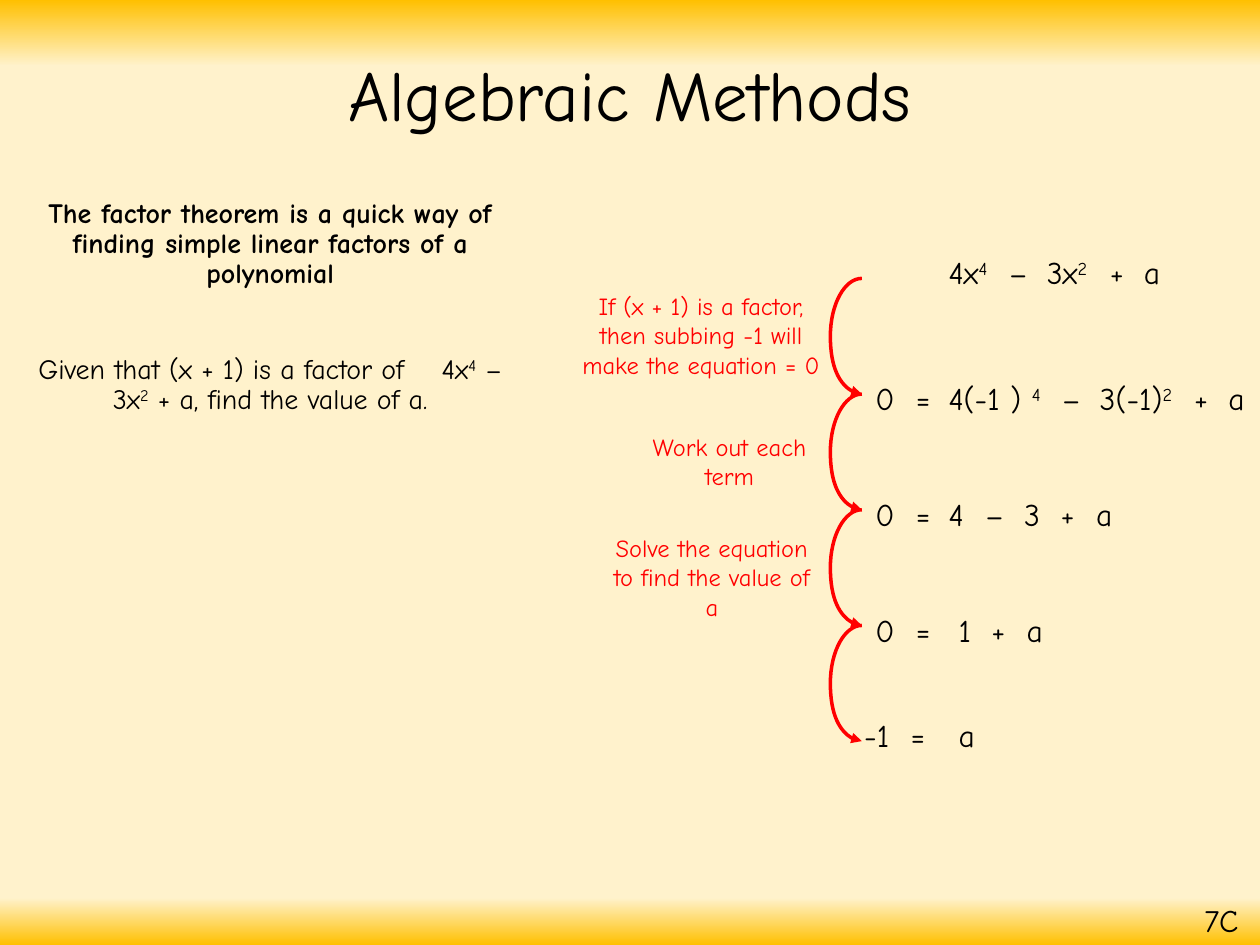
from copy import deepcopy

from lxml.etree import SubElement as Sub
from pptx import Presentation
from pptx.dml.color import RGBColor
from pptx.enum.text import MSO_ANCHOR as Anchor, PP_ALIGN as Align
from pptx.oxml.ns import qn
from pptx.util import Inches, Pt

CELL = Inches(0.1)
COLS, ROWS = 100, 75
FONT = "Comic Neue"
BLACK, RED, GOLD, CREAM = "000000", "FF0000", "FFC000", "FFF2CC"
BEND = 0.55


def grid(*vals):
    return [round(v * CELL) for v in vals]


def tint(color, code):
    color.rgb = RGBColor.from_string(code)


def paint(slide):
    fill = slide.background.fill
    fill.gradient()
    fill.gradient_angle = 270
    stops = next(slide.element.iter(qn("a:gsLst")))
    for _ in range(2):
        stops.insert(1, deepcopy(stops[0]))
    marks = ((0, GOLD), (0.07, CREAM), (0.95, CREAM), (1, GOLD))
    for stop, (place, code) in zip(fill.gradient_stops, marks):
        stop.position = place
        tint(stop.color, code)


def write(para, parts, size=18, code=BLACK, bold=False):
    for part in parts:
        run = para.add_run()
        run.text = part.lstrip("^")
        run.font.name = FONT
        run.font.size = Pt(size)
        run.font.bold = bold
        tint(run.font.color, code)
        if part.startswith("^"):
            run.font._element.set("baseline", "30000")


def add_box(slide, x, y, w, h, wrap=True):
    frame = slide.shapes.add_textbox(*grid(x, y, w, h)).text_frame
    frame.word_wrap = wrap
    return frame


def add_title(slide, text):
    title = slide.shapes.title
    title.left, title.top, title.width, title.height = grid(6.9, 2.4, 86.2, 10.9)
    title.text_frame.vertical_anchor = Anchor.MIDDLE
    para = title.text_frame.paragraphs[0]
    para.alignment = Align.CENTER
    para.line_spacing = 0.9
    write(para, [text], 40.5)


def add_task(slide):
    frame = add_box(slide, 1.6, 15.3, 39.7, 52.2)
    rule = frame.paragraphs[0]
    task = frame.add_paragraph()
    for para in (rule, task):
        para.alignment = Align.CENTER
        para.line_spacing = 0.9
    task.space_before = Pt(37.5)
    write(rule, ["The factor theorem is a quick way of finding simple "
                 "linear factors of a polynomial"], 16, bold=True)
    write(task, ["Given that (x + 1) is a factor of", " ", "4x", "^4", " – 3x",
                 "^2", " + a, find the value of a."], 16)
    task.runs[1].font._element.set("spc", "1600")


def add_term(slide, x, y, w, parts, tabs=()):
    para = add_box(slide, x, y, w, 4).paragraphs[0]
    write(para, parts)
    if tabs:
        stops = Sub(para._p.get_or_add_pPr(), qn("a:tabLst"))
        for pos in grid(*tabs):
            Sub(stops, qn("a:tab"), pos=str(pos), algn="l")


def add_hint(slide, x, y, w, h, text):
    para = add_box(slide, x, y, w, h).paragraphs[0]
    para.alignment = Align.CENTER
    write(para, [text], 14, RED)


def add_arc(slide, x, y, w, h):
    mid = h / 2
    start, *ends = [grid(x + w, y), grid(x, y + mid), grid(x + w, y + h)]
    build = slide.shapes.build_freeform(*start)
    build.add_line_segments(ends, close=False)
    arc = build.convert_to_shape()
    curves = (
        ((w * (1 - BEND), 0), (0, mid * (1 - BEND))),
        ((0, mid * (1 + BEND)), (w * (1 - BEND), h)),
    )
    for line, pulls in zip(list(arc._element.iter(qn("a:lnTo"))), curves):
        line.tag = qn("a:cubicBezTo")
        for i, pull in enumerate(pulls):
            point = deepcopy(line[-1])
            for axis, value in zip("xy", grid(*pull)):
                point.set(axis, str(value))
            line.insert(i, point)
    arc.shadow.inherit = False
    arc.fill.background()
    tint(arc.line.color, RED)
    arc.line.width = Pt(2)
    Sub(arc.line._get_or_add_ln(), qn("a:tailEnd"), type="triangle")


def main():
    deck = Presentation()
    deck.slide_width, deck.slide_height = grid(COLS, ROWS)
    slide = deck.slides.add_slide(deck.slide_layouts[5])
    paint(slide)
    add_title(slide, "Algebraic Methods")
    add_task(slide)
    write(add_box(slide, 94.6, 71, 5.2, 4, False).paragraphs[0], ["7C"])

    add_term(slide, 74.3, 19.6, 23.3, ["4x", "^4", "\t–\t3x", "^2", "\t+\ta"],
             (4.8, 7.8, 12.8, 15.5))
    lines = (
        (29.6, 74.3, 31.7, ["4(-1 ) ", "^4", "\t–\t3(-1)", "^2", "\t+\ta"],
         (9, 12, 19.5, 22.2)),
        (38.8, 74.3, 15.8, ["4\t–\t3\t+\ta"], (2.9, 6, 8.9, 11.7)),
        (48, 75.1, 15, ["1\t+\ta"], (2.6, 5.4)),
        (56.3, 75.1, 4.2, ["a"], ()),
    )
    for i, (y, x, wide, parts, tabs) in enumerate(lines):
        add_arc(slide, 65.9, 22.1 + 9.18 * i, 2.5, 9.18)
        add_term(slide, x, y, wide, parts, tabs)
        if parts == ["a"]:
            add_term(slide, 67.6, y, 8.3, ["-1\t="], [3.7])
        else:
            add_term(slide, 68.5, y, 8.3, ["0\t="], [3.2])

    add_hint(slide, 44.6, 22.6, 22.1, 8.1,
             "If (x + 1) is a factor, then subbing -1 will make the equation = 0")
    add_hint(slide, 48.8, 33.8, 18.2, 5.7, "Work out each term")
    add_hint(slide, 47, 41.8, 19, 8.1, "Solve the equation to find the value of a")
    deck.save("out.pptx")


if __name__ == "__main__":
    main()
